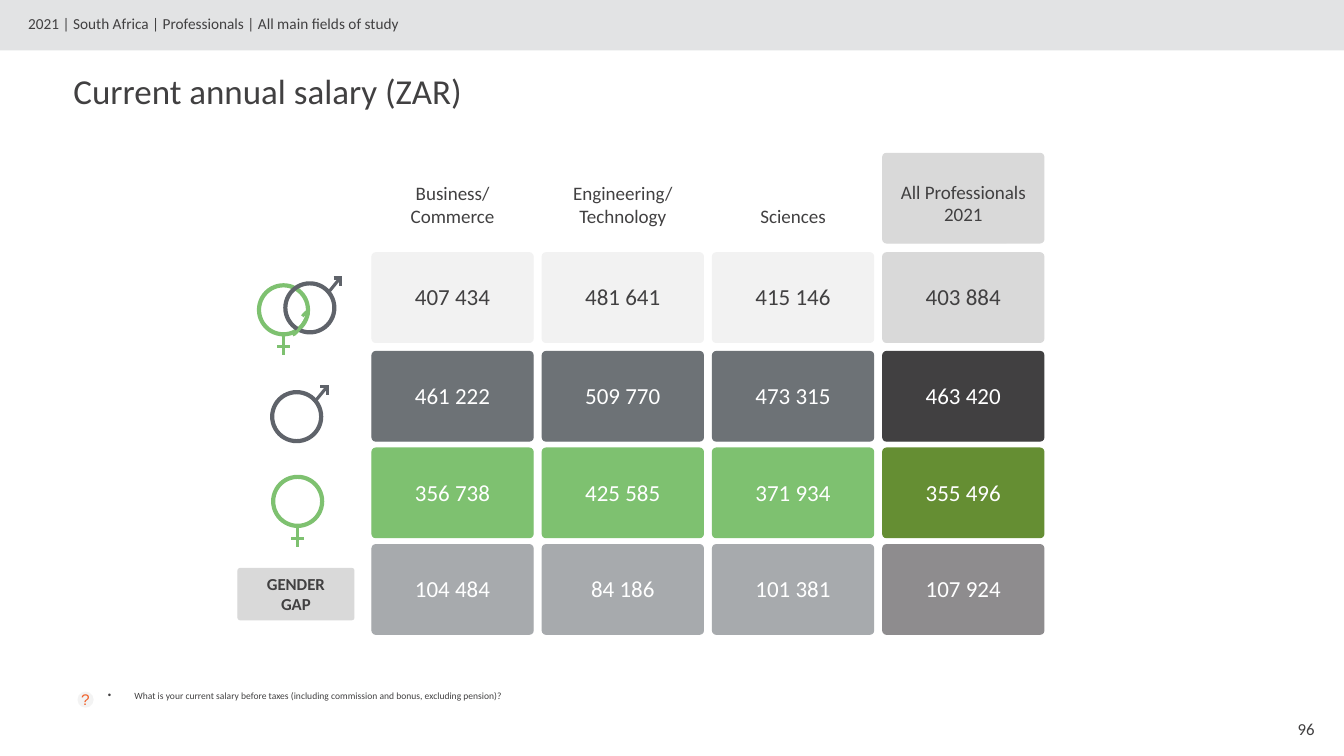
from lxml.etree import SubElement
from pptx import Presentation
from pptx.dml.color import RGBColor
from pptx.enum.shapes import MSO_CONNECTOR, MSO_SHAPE
from pptx.enum.text import MSO_ANCHOR, MSO_AUTO_SIZE, PP_ALIGN
from pptx.oxml.ns import qn
from pptx.util import Pt

COLORS = {
    "text": "414041", "white": "FFFFFF", "band": "E2E3E4", "badge": "F3F3F3",
    "orange": "F1612A", "pale": "F2F2F2", "silver": "D9D9D9", "slate": "6D7276",
    "green": "7EC170", "olive": "658E33", "gray": "A7AAAD", "taupe": "8E8C8E",
    "male": "5F636A",
}
CARD_LEFT, CARD_PITCH, CARD_W, CARD_H = 265.7, 121.6, 115.2, 64.1
HEADER_TOP = 109.5
HEADERS = ["Business/Commerce", "Engineering/Technology", "Sciences", "All Professionals 2021"]
ROWS = [
    (180.5, "pale", "silver", "text", ["407 434", "481 641", "415 146", "403 884"]),
    (251, "slate", "text", "white", ["461 222", "509 770", "473 315", "463 420"]),
    (320, "green", "olive", "white", ["356 738", "425 585", "371 934", "355 496"]),
    (389, "gray", "taupe", "white", ["104 484", "84 186", "101 381", "107 924"]),
]
RING = 35
MALE_ARROW = [(34.5, -3.8, 40.3, -3.8), (39.6, -4.3, 39.6, 2), (39, -3.6, 30.2, 7.2)]
FEMALE_CROSS = [(17.5, 35, 17.5, 50), (13, 43.8, 22.3, 43.8)]


def rgb(name):
    return RGBColor.from_string(COLORS[name])


def place(s, left, top, width, height):
    s.left, s.top, s.width, s.height = Pt(left), Pt(top), Pt(width), Pt(height)


def add_text(s, lines, size, color="text", align=PP_ALIGN.CENTER, anchor=MSO_ANCHOR.MIDDLE,
             bold=False, font="Calibri"):
    tf = s.text_frame
    tf.word_wrap = True
    tf.auto_size = MSO_AUTO_SIZE.NONE
    tf.vertical_anchor = anchor
    for i, line in enumerate(lines):
        p = tf.add_paragraph() if i else tf.paragraphs[0]
        p.alignment = align
        p.space_before = Pt(0)
        r = p.add_run()
        r.text = line
        r.font.name = font
        r.font.size = Pt(size)
        r.font.bold = bold
        r.font.color.rgb = rgb(color)
    return tf


def fill_placeholder(s, box, text, size, bulleted=False):
    place(s, *box)
    tf = add_text(s, [text], size, align=PP_ALIGN.LEFT, anchor=MSO_ANCHOR.TOP)
    tf.margin_left = tf.margin_right = Pt(7.9)
    pPr = tf.paragraphs[0]._p.get_or_add_pPr()
    indent = Pt(18.9) if bulleted else 0
    pPr.set("marL", str(indent))
    pPr.set("indent", str(-indent))
    if bulleted:
        SubElement(pPr, qn("a:buChar")).set("char", "•")
    else:
        SubElement(pPr, qn("a:buNone"))


def add_box(slide, kind, box, fill=None, line=None, weight=0.75):
    s = slide.shapes.add_shape(kind, *(Pt(v) for v in box))
    s.shadow.inherit = False
    if fill:
        s.fill.solid()
        s.fill.fore_color.rgb = rgb(fill)
    else:
        s.fill.background()
    if line:
        s.line.color.rgb = rgb(line)
        s.line.width = Pt(weight)
    else:
        s.line.fill.background()
    return s


def add_card(slide, box, fill):
    s = add_box(slide, MSO_SHAPE.ROUNDED_RECTANGLE, box, fill, fill)
    s.adjustments[0] = 0.043
    return s


def add_symbol(slide, left, top, color, strokes):
    add_box(slide, MSO_SHAPE.FLOWCHART_CONNECTOR, (left, top, RING, RING), line=color, weight=3)
    for x1, y1, x2, y2 in strokes:
        c = slide.shapes.add_connector(MSO_CONNECTOR.STRAIGHT, Pt(left + x1), Pt(top + y1),
                                       Pt(left + x2), Pt(top + y2))
        c.line.color.rgb = rgb(color)
        c.line.width = Pt(2.25)
        SubElement(c._element.spPr, qn("a:effectLst"))


def add_headers(slide):
    for col, header in enumerate(HEADERS):
        box = (CARD_LEFT + col * CARD_PITCH, HEADER_TOP, CARD_W, CARD_H)
        if col == len(HEADERS) - 1:
            s = add_card(slide, box, "silver")
        else:
            s = slide.shapes.add_textbox(*(Pt(v) for v in box))
        tf = add_text(s, [header], 13.6, anchor=MSO_ANCHOR.BOTTOM)
        tf.margin_bottom = Pt(11.5)


def add_salaries(slide):
    for top, fill, total_fill, color, salaries in ROWS:
        for col, salary in enumerate(salaries):
            is_total = col == len(salaries) - 1
            box = (CARD_LEFT + col * CARD_PITCH, top, CARD_W, CARD_H)
            s = add_card(slide, box, total_fill if is_total else fill)
            tf = add_text(s, [salary], 16.4, color)
            tf.margin_bottom = Pt(5)


def add_row_labels(slide):
    add_symbol(slide, 185, 203.8, "green", FEMALE_CROSS)
    add_symbol(slide, 203.8, 202.4, "male", MALE_ARROW)
    arc = add_box(slide, MSO_SHAPE.ARC, (204.5, 229, 20.2, 3.6), line="green", weight=2.25)
    arc.adjustments[0] = 96.98
    arc.adjustments[1] = 0
    arc.rotation = 123.6
    add_symbol(slide, 194.4, 280.1, "male", MALE_ARROW)
    add_symbol(slide, 195.1, 340.6, "green", FEMALE_CROSS)
    s = add_card(slide, (170, 406, 82.8, 36.7), "silver")
    add_text(s, ["GENDER", "GAP"], 12, bold=True)


def add_frame(slide):
    add_box(slide, MSO_SHAPE.RECTANGLE, (0, 0, 960, 36), "band")
    s = add_box(slide, MSO_SHAPE.FLOWCHART_CONNECTOR, (55.4, 494, 11.5, 11.5), "badge")
    tf = add_text(s, ["?"], 11, "orange", font="Arial")
    tf.word_wrap = False
    tf.margin_left = tf.margin_right = tf.margin_top = tf.margin_bottom = 0
    s = slide.shapes.add_textbox(Pt(875.5), Pt(506.2), Pt(70.6), Pt(28.8))
    add_text(s, ["96"], 12, align=PP_ALIGN.RIGHT)


def main():
    prs = Presentation()
    prs.slide_width, prs.slide_height = Pt(960), Pt(540)
    slide = prs.slides.add_slide(prs.slide_layouts[3])
    title, context, question = slide.placeholders
    add_frame(slide)
    fill_placeholder(title, (44.6, 46.1, 903.6, 44.6), "Current annual salary (ZAR)", 25)
    fill_placeholder(context, (12.2, 6.5, 818, 22.3),
                     "2021 | South Africa | Professionals | All main fields of study", 10.9)
    fill_placeholder(question, (69.1, 488.9, 396.7, 15.8),
                     "What is your current salary before taxes "
                     "(including commission and bonus, excluding pension)?", 6.8, bulleted=True)
    slide.shapes._spTree.append(context._element)
    add_headers(slide)
    add_salaries(slide)
    add_row_labels(slide)
    prs.save("out.pptx")


if __name__ == "__main__":
    main()
